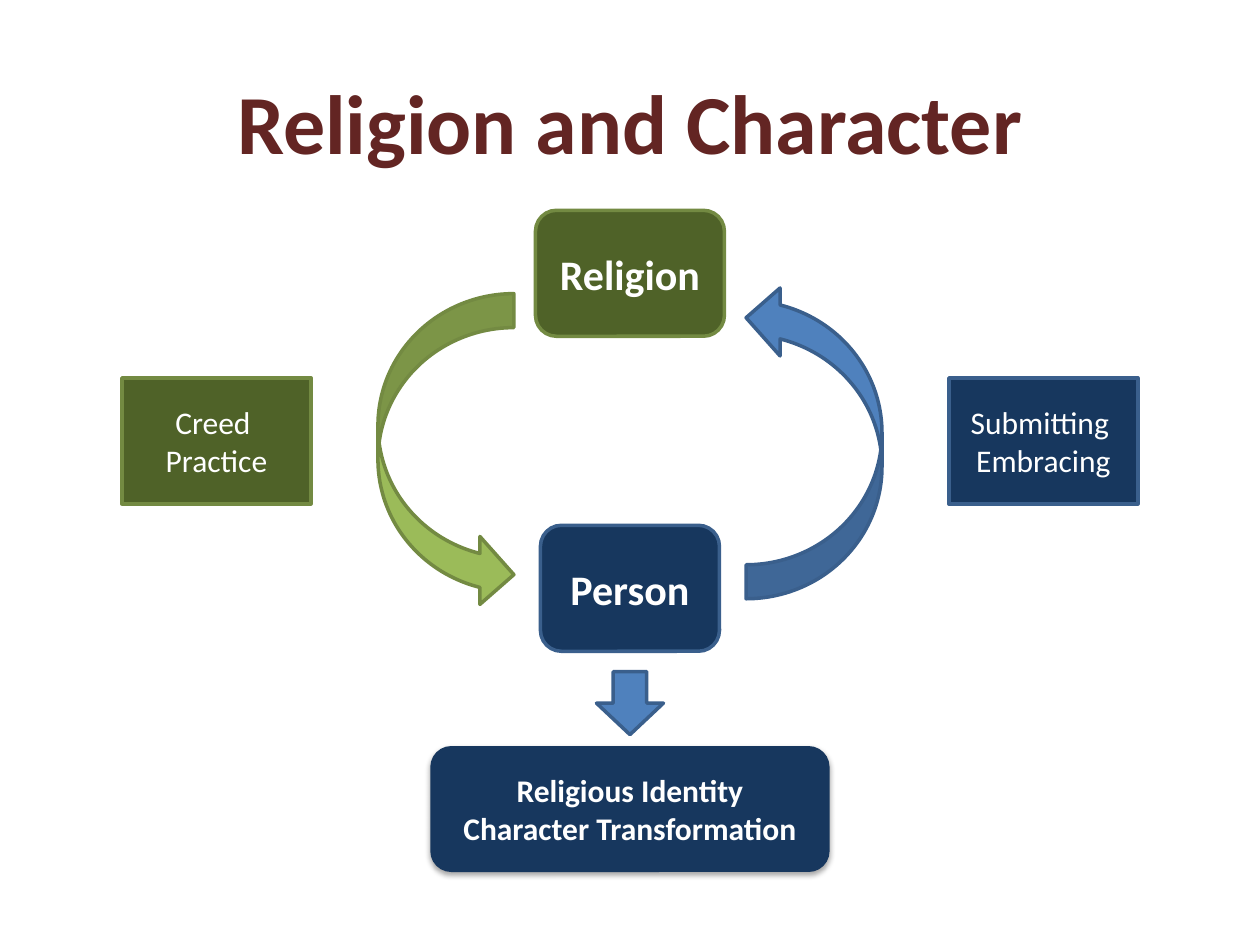
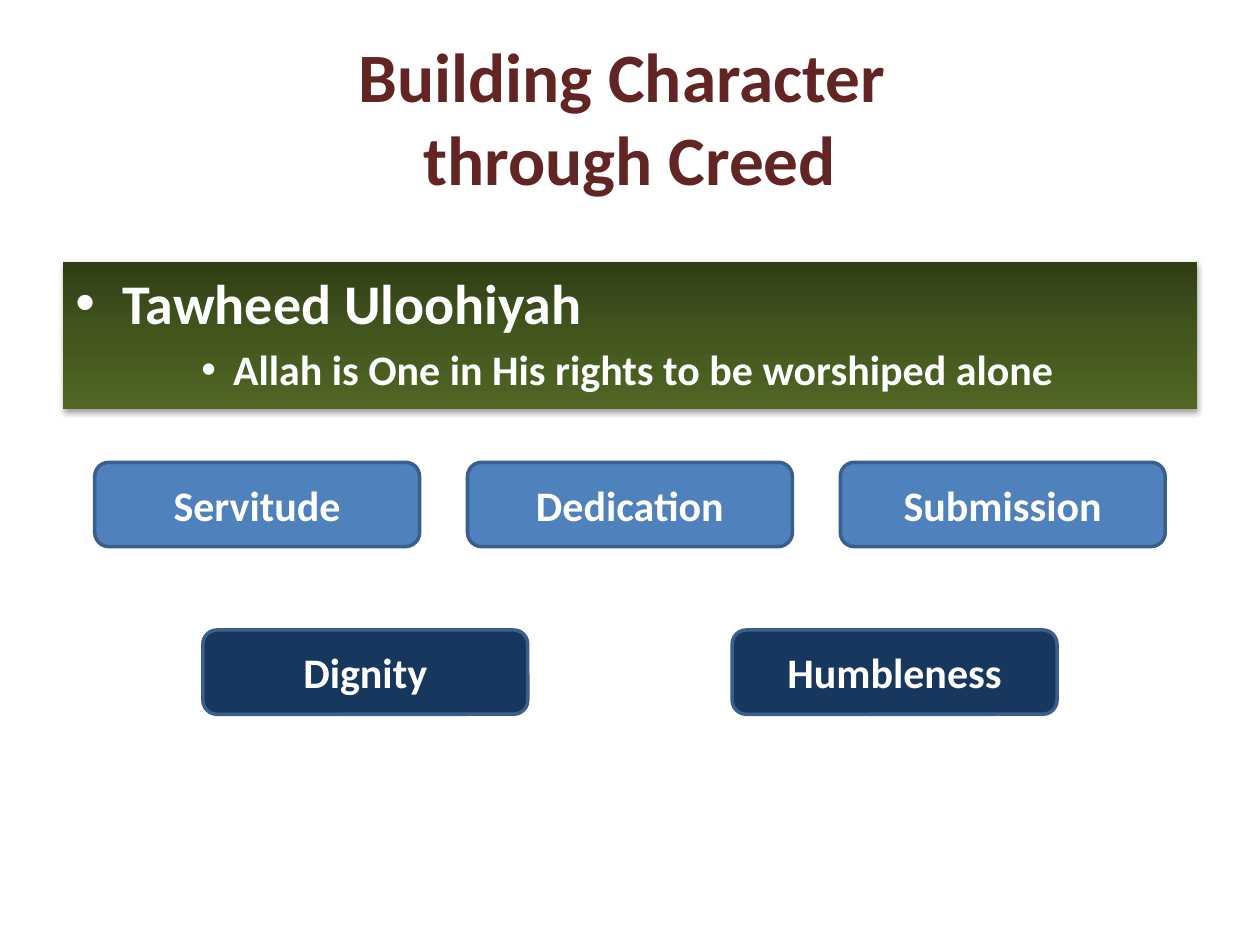
import copy

import lxml.etree
import pptx
import pptx.dml.color
import pptx.enum.shapes
import pptx.enum.text
import pptx.oxml.ns
import pptx.util

Cm = pptx.util.Cm
Pt = pptx.util.Pt
qn = pptx.oxml.ns.qn
rgb = pptx.dml.color.RGBColor.from_string
SHAPE = pptx.enum.shapes.MSO_SHAPE
ALIGN = pptx.enum.text.PP_ALIGN

FONT = "Calibri"
MAROON, WHITE = "632523", "FFFFFF"
GREEN, LIGHT_GREEN, GREEN_LINE = "4F6228", "9BBB59", "738A42"
NAVY, BLUE, BLUE_LINE = "17375E", "4F81BD", "3A5F8C"
PAGE_WIDTH, PAGE_HEIGHT = 25.4, 19.05
MARGIN, TITLE_HEIGHT = 1.27, 3.18


def write(box, text, size, colour=WHITE, bold=True, align=ALIGN.CENTER):
    """Fill a box with text, one paragraph per line."""
    frame = box.text_frame
    frame.word_wrap = True
    frame.vertical_anchor = pptx.enum.text.MSO_ANCHOR.MIDDLE
    frame.text = text
    for para in frame.paragraphs:
        para.alignment = align
        for span in para.runs:
            span.font.name = FONT
            span.font.size = Pt(size)
            span.font.bold = bold
            span.font.color.rgb = rgb(colour)


def add_block(page, kind, left, top, width, height, fill, line=None):
    """Add a flat preset shape, outlined only if a line colour is given."""
    block = page.shapes.add_shape(kind, Cm(left), Cm(top), Cm(width), Cm(height))
    block.shadow.inherit = False
    block.fill.solid()
    block.fill.fore_color.rgb = rgb(fill)
    if line:
        block.line.color.rgb = rgb(line)
        block.line.width = Pt(2)
    else:
        block.line.fill.background()
    return block


deck = pptx.Presentation()
deck.slide_width, deck.slide_height = Cm(PAGE_WIDTH), Cm(PAGE_HEIGHT)

pages = []
for text, top, size in [
    ("Religion and Character", 0.84, 48),
    ("Building Character \vthrough Creed", 0.76, 39.6),
]:
    page = deck.slides.add_slide(deck.slide_layouts[6])
    title = page.shapes.add_textbox(
        Cm(MARGIN), Cm(top), Cm(PAGE_WIDTH - 2 * MARGIN), Cm(TITLE_HEIGHT))
    write(title, text, size, MAROON)
    pages.append(page)
cycle_page, creed_page = pages

# Cycle between religion and person
NODE_WIDTH, NODE_HEIGHT = 3.81, 2.54
for text, top, width, size, fill, line in [
    ("Religion", 4.24, NODE_WIDTH, 24, GREEN, GREEN_LINE),
    ("Person", 10.59, 3.61, 24, NAVY, BLUE_LINE),
    ("Religious Identity\nCharacter Transformation", 15.04, 8.05, 18, NAVY, None),
]:
    node = add_block(cycle_page, SHAPE.ROUNDED_RECTANGLE, (PAGE_WIDTH - width) / 2,
                     top, width, NODE_HEIGHT, fill, line)
    write(node, text, size)
identity = node

ARROW_LEFT, ARROW_WIDTH, ARROW_HEIGHT = 7.62, 2.74, 6.35
add_block(cycle_page, SHAPE.CURVED_RIGHT_ARROW, ARROW_LEFT, 5.92,
          ARROW_WIDTH, ARROW_HEIGHT, LIGHT_GREEN, GREEN_LINE)
return_arrow = add_block(
    cycle_page, SHAPE.CURVED_RIGHT_ARROW, PAGE_WIDTH - ARROW_LEFT - ARROW_WIDTH, 5.72,
    ARROW_WIDTH, ARROW_HEIGHT, BLUE, BLUE_LINE)
return_arrow.rotation = 180
DOWN_WIDTH = 1.35
add_block(cycle_page, SHAPE.DOWN_ARROW, (PAGE_WIDTH - DOWN_WIDTH) / 2, 13.54,
          DOWN_WIDTH, 1.27, BLUE, BLUE_LINE)

SIDE_LEFT = 2.46
for text, left, fill, line in [
    ("Submitting \nEmbracing", PAGE_WIDTH - SIDE_LEFT - NODE_WIDTH, NAVY, BLUE_LINE),
    ("Creed \nPractice", SIDE_LEFT, GREEN, GREEN_LINE),
]:
    side = add_block(cycle_page, SHAPE.RECTANGLE, left, 7.62,
                     NODE_WIDTH, NODE_HEIGHT, fill, line)
    write(side, text, 18, bold=False)

# Creed band with its gradient and bullets
band = add_block(creed_page, SHAPE.RECTANGLE, MARGIN, 5.28,
                 PAGE_WIDTH - 2 * MARGIN, 2.97, GREEN)
band.fill.gradient()
band.fill.gradient_angle = 270
stops = band._element.spPr.find(".//" + qn("a:gsLst"))
middle = copy.deepcopy(stops[0])
stops.insert(1, middle)
for stop, colour, position in zip(
        band.fill.gradient_stops, ["303D15", "44561E", "516624"], [0, 0.5, 1]):
    stop.color.rgb = rgb(colour)
    stop.position = position

write(band, "Tawheed Uloohiyah\nAllah is One in His rights to be worshiped alone",
      32, align=ALIGN.LEFT)
band.text_frame.vertical_anchor = pptx.enum.text.MSO_ANCHOR.TOP
heading, detail = band.text_frame.paragraphs
detail.level = 1
detail.space_before = Pt(4.8)
detail.runs[0].font.size = Pt(24)
for para, indent, hanging in [(heading, 0.95, 0.95), (detail, 3.18, 0.64)]:
    properties = para._p.get_or_add_pPr()
    properties.set("marL", str(Cm(indent)))
    properties.set("indent", str(-Cm(hanging)))
    lxml.etree.SubElement(properties, qn("a:buFont")).set("typeface", "Arial")
    lxml.etree.SubElement(properties, qn("a:buChar")).set("char", "•")

# Qualities in two rows, each spread evenly between equal side margins
TRAIT_WIDTH, TRAIT_HEIGHT = 6.55, 1.7
for traits, side_margin, top, fill in [
    (["Servitude", "Dedication", "Submission"], 1.91, 9.32, BLUE),
    (["Dignity", "Humbleness"], 4.09, 12.7, NAVY),
]:
    step = (PAGE_WIDTH - 2 * side_margin - TRAIT_WIDTH) / (len(traits) - 1)
    for column, text in enumerate(traits):
        trait = add_block(creed_page, SHAPE.ROUNDED_RECTANGLE, side_margin + column * step,
                          top, TRAIT_WIDTH, TRAIT_HEIGHT, fill, BLUE_LINE)
        write(trait, text, 24)

# Soft shadow below the identity box and the band
for box in [identity, band]:
    effects = box._element.spPr.find(qn("a:effectLst"))
    shadow = lxml.etree.SubElement(effects, qn("a:outerShdw"), {
        "blurRad": str(Pt(3.1)), "dist": str(Pt(1.8)), "dir": "5400000", "rotWithShape": "0"})
    black = lxml.etree.SubElement(shadow, qn("a:srgbClr"), val="000000")
    lxml.etree.SubElement(black, qn("a:alpha"), val="35000")

deck.save("out.pptx")
